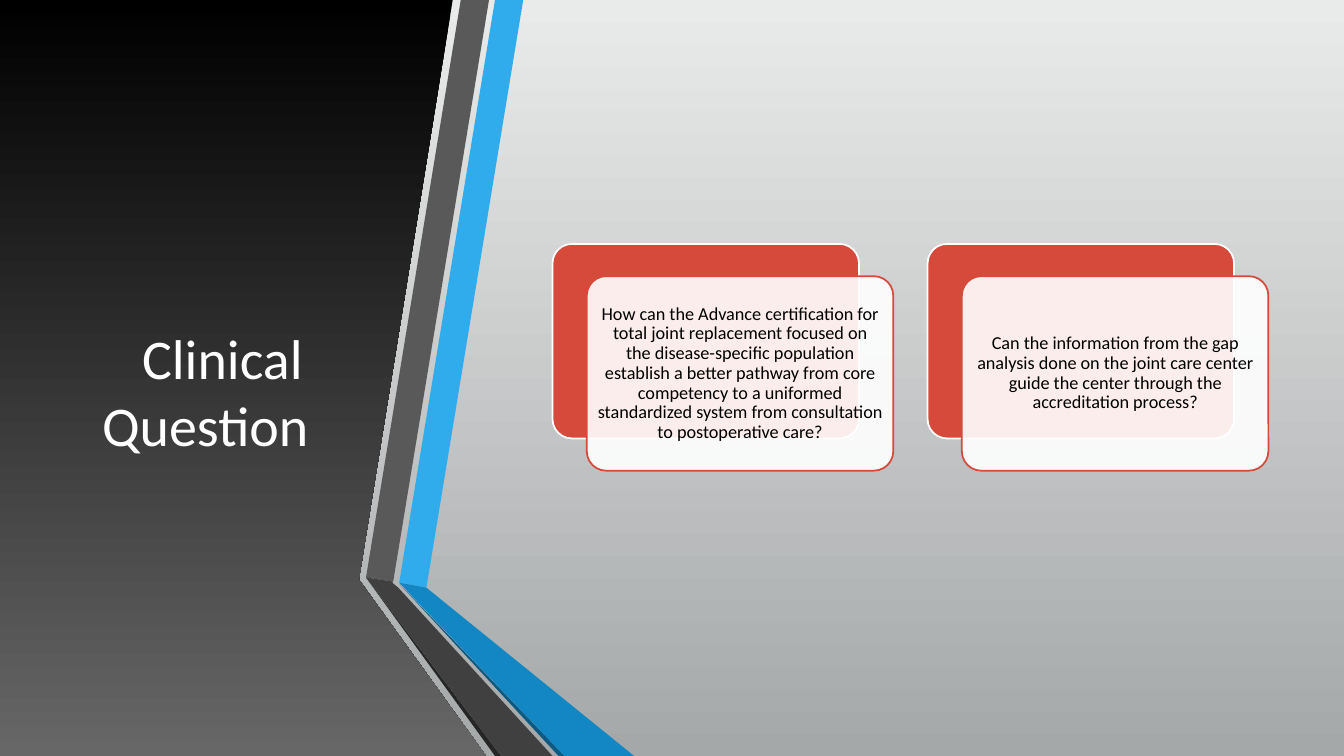
from lxml import etree
from pptx import Presentation
from pptx.dml.color import RGBColor
from pptx.enum.shapes import MSO_SHAPE
from pptx.enum.text import MSO_ANCHOR, PP_ALIGN
from pptx.oxml.ns import qn
from pptx.util import Inches, Pt

ROUNDED = MSO_SHAPE.ROUNDED_RECTANGLE
MIDDLE = MSO_ANCHOR.MIDDLE
CENTER = PP_ALIGN.CENTER
WIDTH, HEIGHT = 13.33, 7.5
RED, WHITE, BLACK = "D64A3B", "FFFFFF", "000000"


def paint(fill, *colors, opacity=100):
    """One colour gives a solid fill, two give a gradient from top to bottom."""
    if len(colors) == 2:
        fill.gradient()
        fill.gradient_angle = 270
        for stop, color in zip(fill.gradient_stops, colors):
            stop.color.rgb = RGBColor.from_string(color)
        return
    fill.solid()
    fill.fore_color.rgb = RGBColor.from_string(colors[0])
    if opacity < 100:
        tint = fill._xPr.find(qn("a:solidFill"))[0]
        etree.SubElement(tint, qn("a:alpha")).set("val", str(opacity * 1000))


def write(shape, text, size, color, spacing=1.0, inset=0.1, top_inset=0.05, indent=0):
    frame = shape.text_frame
    frame.word_wrap = True
    frame.vertical_anchor = MIDDLE
    frame.margin_left = frame.margin_right = Inches(inset)
    frame.margin_top, frame.margin_bottom = Inches(top_inset), Inches(0.05)
    paragraph = frame.paragraphs[0]
    paragraph.alignment = CENTER
    paragraph.line_spacing = spacing
    if indent:
        paragraph._p.get_or_add_pPr().set("indent", str(Inches(indent)))
    for position, line in enumerate(text.split("\n")):
        if position:
            paragraph.add_line_break()
        run = paragraph.add_run()
        run.text = line
        run.font.name, run.font.size = "Calibri", Pt(size)
        paint(run.font.fill, color)


deck = Presentation()
deck.slide_width, deck.slide_height = Inches(WIDTH), Inches(HEIGHT)
slide = deck.slides.add_slide(deck.slide_layouts[6])
paint(slide.background.fill, "E9EBEA", "A5A8A9")

# Dark panel and the folded ribbons beside it: colours, then outline in inches
panel = ((BLACK, "676767"),
         [(0, 0), (4.49, 0), (3.56, 5.75), (4.82, HEIGHT), (0, HEIGHT)])
ribbons = [
    (("30ACEC",), [(3.96, 5.78), (4.23, 5.83), (5.19, 0), (4.91, 0)]),
    (("595959",), [(4.85, 0), (4.57, 0), (3.63, 5.73), (3.9, 5.77)]),
    (("262626",), [(3.63, 5.73), (4.91, HEIGHT), (4.97, HEIGHT)]),
    (("0C5A82",), [(3.96, 5.79), (5.54, HEIGHT), (5.6, HEIGHT)]),
    (("1287C3",), [(3.96, 5.78), (5.6, HEIGHT), (6.29, HEIGHT), (4.23, 5.83)]),
    (("404040",), [(5.48, HEIGHT), (3.95, 5.83), (3.89, 5.78), (3.9, 5.77),
                   (3.63, 5.73), (4.97, HEIGHT)]),
]
for colors, outline in [panel] + ribbons:
    corners = [(Inches(x), Inches(y)) for x, y in outline]
    builder = slide.shapes.build_freeform(*corners[0])
    builder.add_line_segments(corners[1:], close=True)
    facet = builder.convert_to_shape()
    facet.shadow.inherit = False
    paint(facet.fill, *colors)
    facet.line.fill.background()

# Heading, set below the middle of the panel
heading = slide.shapes.add_textbox(Inches(0.59), Inches(0.75), Inches(2.89), Inches(5.58))
write(heading, "Clinical Question", 40, WHITE, top_inset=0.72, indent=0.34)

# Question cards: a red back plate and a translucent front plate, shifted
questions = [
    "How can the Advance certification for total joint replacement focused on\n"
    "the disease-specific population establish a better pathway from core "
    "competency to a uniformed standardized system from consultation to "
    "postoperative care?",
    "Can the information from the gap analysis done on the joint care center "
    "guide the center through the accreditation process?",
]
CARD_LEFT, CARD_TOP, CARD_PITCH = 5.48, 2.42, 3.72
CARD_WIDTH, CARD_HEIGHT = 3.04, 1.93
plates = [(0, 0, RED, WHITE, 100), (0.34, 0.32, WHITE, RED, 90)]
for column, question in enumerate(questions):
    for shift_x, shift_y, color, edge, opacity in plates:
        plate = slide.shapes.add_shape(
            ROUNDED,
            Inches(CARD_LEFT + column * CARD_PITCH + shift_x),
            Inches(CARD_TOP + shift_y),
            Inches(CARD_WIDTH), Inches(CARD_HEIGHT))
        plate.adjustments[0] = 0.1
        plate.shadow.inherit = False
        paint(plate.fill, color, opacity=opacity)
        paint(plate.line.fill, edge)
        plate.line.width = Pt(1.25)
    write(plate, question, 13, BLACK, spacing=0.9, inset=0.05)

deck.save("out.pptx")
